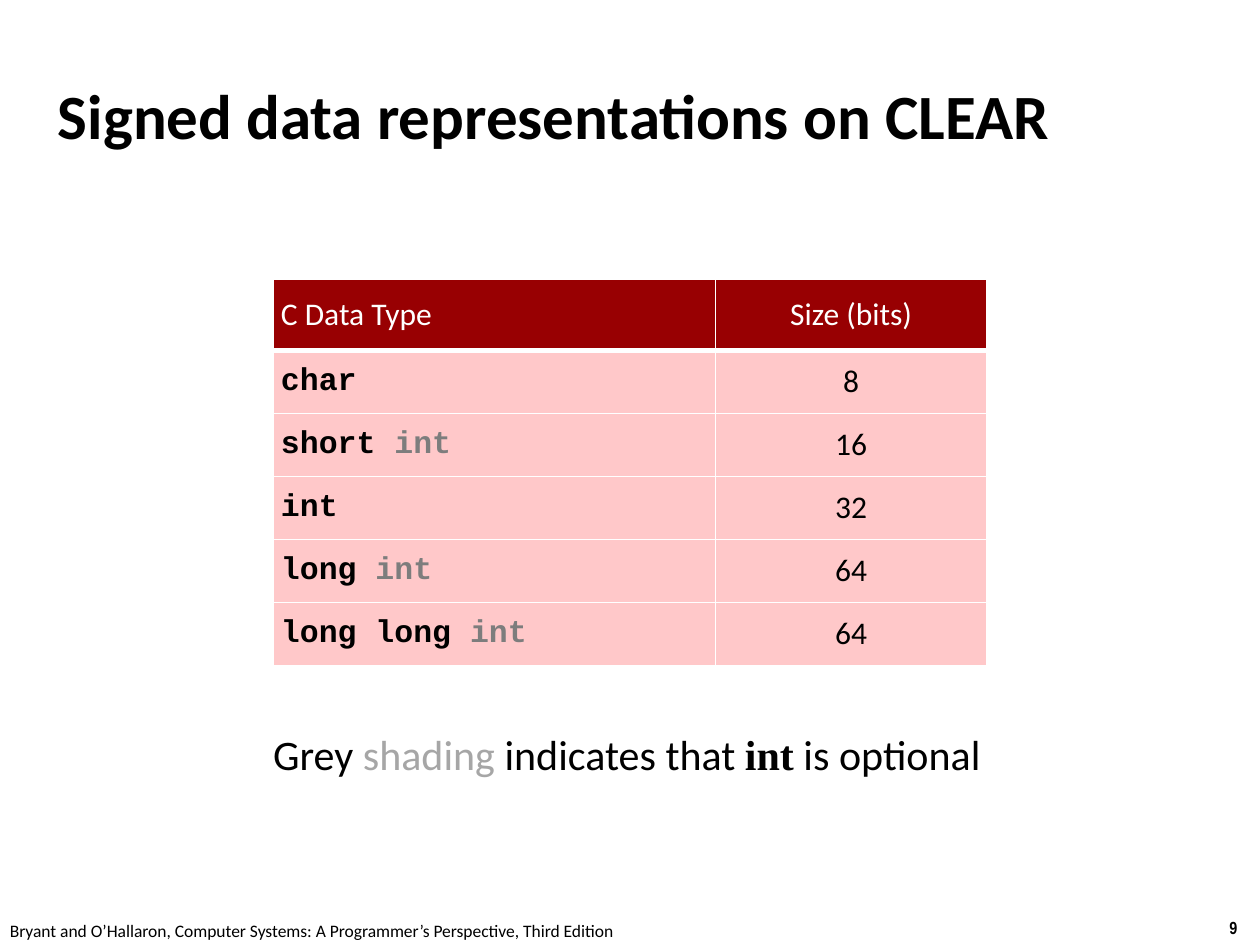
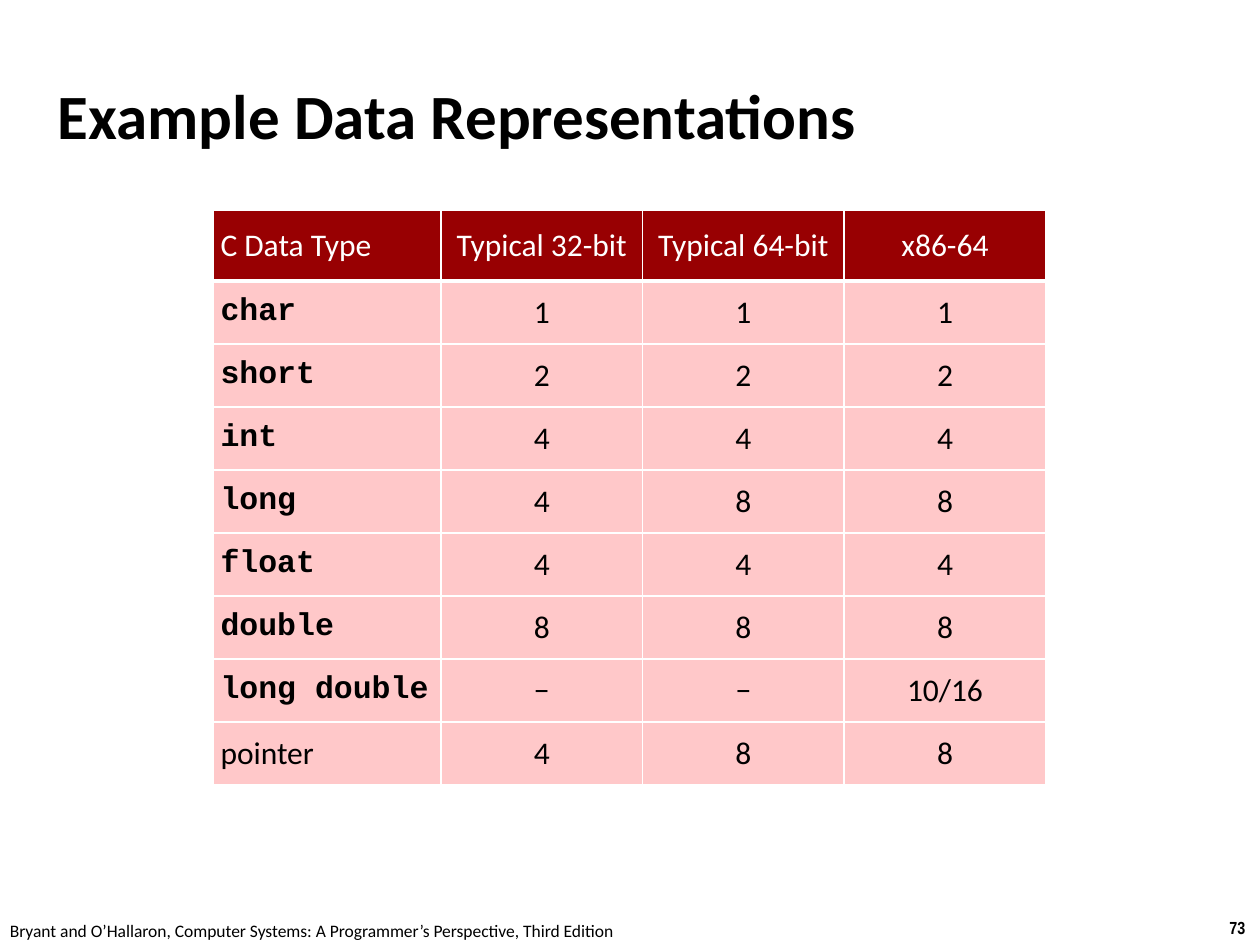
"""Build two slides that tabulate the sizes of C data types."""
import pptx
import pptx.util
import pptx.dml.color
import pptx.enum.text
import pptx.oxml.ns
import lxml.etree

Inches = pptx.util.Inches
Pt = pptx.util.Pt
Align = pptx.enum.text.PP_ALIGN
Anchor = pptx.enum.text.MSO_ANCHOR

COLOURS = {
    "black": "000000", "white": "FFFFFF", "header": "980002",
    "body": "FFC8C9", "optional": "7D7D7D", "shading": "A6A6A6",
}
STYLES = {
    "title": {"name": "Calibri", "size": Pt(36), "bold": True, "colour": "black"},
    "footer": {"name": "Calibri", "size": Pt(10), "bold": False, "colour": "black"},
    "number": {"name": "Arial Narrow", "size": Pt(10), "bold": True, "colour": "black"},
    "header": {"name": "Calibri", "size": Pt(18), "bold": False, "colour": "white"},
    "plain": {"name": "Calibri", "size": Pt(18), "bold": False, "colour": "black"},
    "code": {"name": "Courier New", "size": Pt(18), "bold": True, "colour": "black"},
    "optional": {"name": "Courier New", "size": Pt(18), "bold": True, "colour": "optional"},
    "note": {"name": "Calibri", "size": Pt(24), "bold": False, "colour": "black"},
    "note_grey": {"name": "Calibri", "size": Pt(24), "bold": False, "colour": "shading"},
    "note_code": {"name": "Times New Roman", "size": Pt(24), "bold": True, "colour": "black"},
}
FOOTER = "Bryant and O’Hallaron, Computer Systems: A Programmer’s Perspective, Third Edition"
HEADER_HEIGHT, ROW_HEIGHT = 0.56, 0.5

SLIDES = [
    {
        "title": "Signed data representations on CLEAR",
        "number": "9",
        "table_at": (2.17, 2.22),
        "columns": [3.51, 2.15],
        "header": ["C Data Type", "Size (bits)"],
        "rows": [
            ([("char", "code")], "8"),
            ([("short ", "code"), ("int", "optional")], "16"),
            ([("int", "code")], "32"),
            ([("long ", "code"), ("int", "optional")], "64"),
            ([("long long ", "code"), ("int", "optional")], "64"),
        ],
        "note": [("Grey ", "note"), ("shading", "note_grey"), (" indicates that ", "note"),
                 ("int", "note_code"), (" is optional", "note")],
    },
    {
        "title": "Example Data Representations",
        "number": "73",
        "table_at": (1.69, 1.67),
        "columns": [1.81, 1.6, 1.6, 1.6],
        "header": ["C Data Type", "Typical 32-bit", "Typical 64-bit", "x86-64"],
        "rows": [
            ([("char", "code")], "1", "1", "1"),
            ([("short", "code")], "2", "2", "2"),
            ([("int", "code")], "4", "4", "4"),
            ([("long", "code")], "4", "8", "8"),
            ([("float", "code")], "4", "4", "4"),
            ([("double", "code")], "8", "8", "8"),
            ([("long double", "code")], "−", "−", "10/16"),
            ([("pointer", "plain")], "4", "8", "8"),
        ],
        "note": [],
    },
]


def write_spans(frame, spans, alignment=Align.LEFT):
    para = frame.paragraphs[0]
    para.alignment = alignment
    for text, style in spans:
        span = para.add_run()
        span.text = text
        for key, value in STYLES[style].items():
            if key == "colour":
                span.font.color.rgb = pptx.dml.color.RGBColor.from_string(COLOURS[value])
            else:
                setattr(span.font, key, value)
    return para


def add_border(cell, side, points):
    line = lxml.etree.SubElement(
        cell._tc.get_or_add_tcPr(), pptx.oxml.ns.qn(f"a:ln{side}"), w=str(Pt(points)))
    fill = lxml.etree.SubElement(line, pptx.oxml.ns.qn("a:solidFill"))
    lxml.etree.SubElement(fill, pptx.oxml.ns.qn("a:srgbClr"), val=COLOURS["white"])


deck = pptx.Presentation()
deck.slide_width, deck.slide_height = Inches(10), Inches(7.5)

for content in SLIDES:
    page = deck.slides.add_slide(deck.slide_layouts[5])

    title = page.shapes.title
    for key, value in {"left": 0.42, "top": 0.28, "width": 9.17, "height": 1.25}.items():
        setattr(title, key, Inches(value))
    frame = title.text_frame
    for side in ("left", "top", "right", "bottom"):
        setattr(frame, f"margin_{side}", Inches(0.04))
    frame.vertical_anchor = Anchor.MIDDLE
    frame.auto_size = pptx.enum.text.MSO_AUTO_SIZE.NONE
    para = write_spans(frame, [(content["title"], "title")])
    indent = para._p.get_or_add_pPr()
    indent.set("marL", str(Inches(0.13)))
    indent.set("indent", str(Inches(-0.13)))

    labels = [
        ((9.66, 7.23, 0.34, 0.27), [(content["number"], "number")], False),
        ((-0.02, 7.25, 5.08, 0.27), [(FOOTER, "footer")], False),
        ((2.07, 5.73, 5.86, 0.5), content["note"], True),
    ]
    for place, spans, wrap in labels:
        if spans:
            box = page.shapes.add_textbox(*map(Inches, place))
            box.text_frame.word_wrap = wrap
            write_spans(box.text_frame, spans)

    header = [[(text, "header")] for text in content["header"]]
    rows = [[first] + [[(text, "plain")] for text in rest] for first, *rest in content["rows"]]
    grid = [header] + rows
    heights = [HEADER_HEIGHT] + [ROW_HEIGHT] * len(rows)
    size = (sum(content["columns"]), sum(heights))
    table = page.shapes.add_table(
        len(grid), len(header), *map(Inches, content["table_at"] + size)).table
    table.horz_banding = False
    for column, width in zip(table.columns, content["columns"]):
        column.width = Inches(width)
    for row_index, (spans_row, height) in enumerate(zip(grid, heights)):
        table.rows[row_index].height = Inches(height)
        for column_index, spans in enumerate(spans_row):
            cell = table.cell(row_index, column_index)
            for side in ("left", "top", "right", "bottom"):
                setattr(cell, f"margin_{side}", Inches(0.06))
            cell.vertical_anchor = Anchor.MIDDLE
            write_spans(cell.text_frame, spans, Align.CENTER if column_index else Align.LEFT)
            borders = {"L": 1, "R": 1, "T": 3 if row_index == 1 else 1,
                       "B": 3 if row_index == 0 else 1}
            for side, points in borders.items():
                add_border(cell, side, points)
            cell.fill.solid()
            cell.fill.fore_color.rgb = pptx.dml.color.RGBColor.from_string(
                COLOURS["body" if row_index else "header"])

deck.save("out.pptx")
